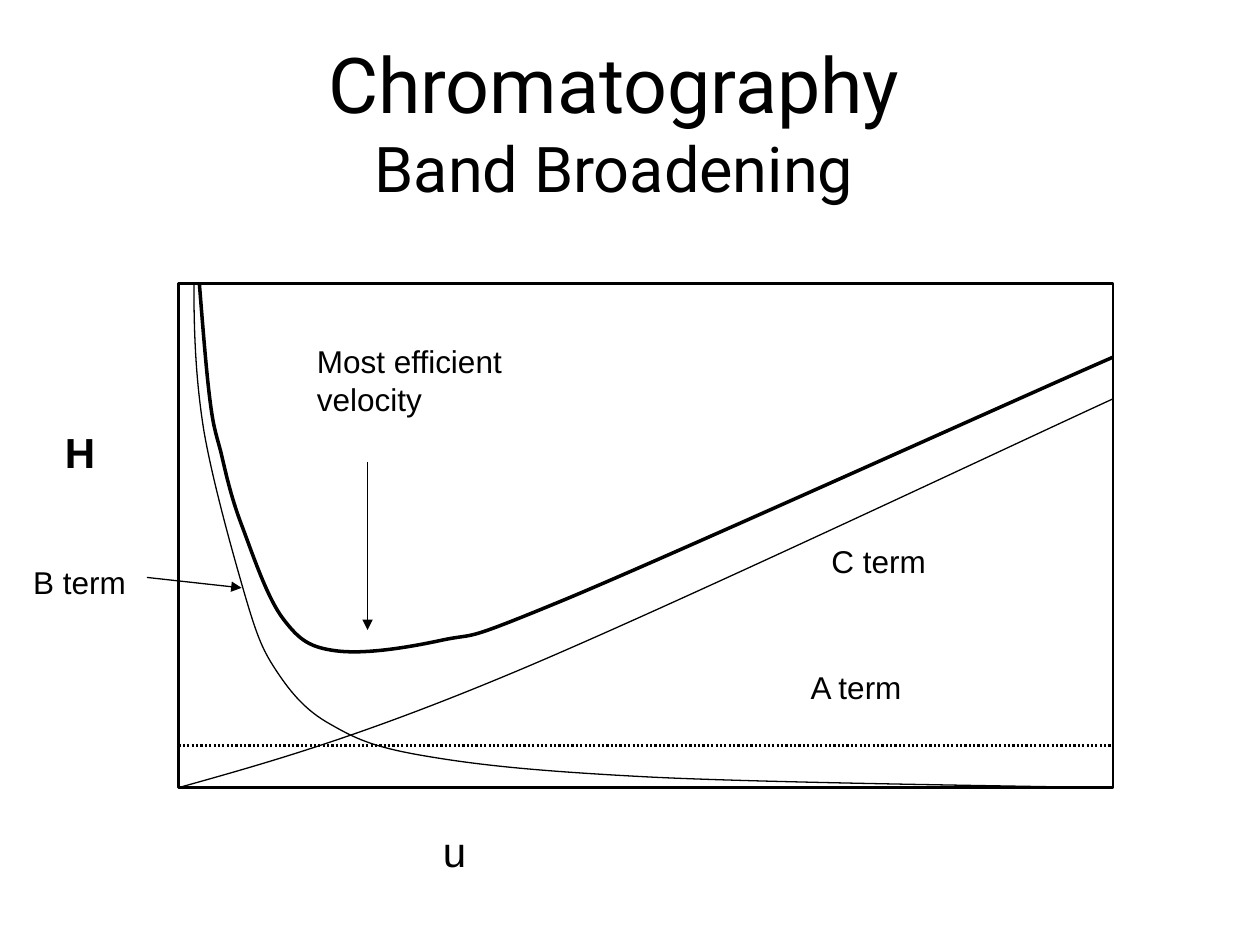
"""Draw the band broadening slide: plate height H against flow velocity u."""
from dataclasses import dataclass
from lxml.etree import SubElement as Sub
from pptx import Presentation as Deck
from pptx.dml.color import RGBColor as Rgb
from pptx.enum.dml import MSO_LINE as Dash
from pptx.enum.shapes import MSO_CONNECTOR as Join, MSO_SHAPE as Kind
from pptx.enum.text import MSO_ANCHOR as Anchor, PP_ALIGN as Align
from pptx.oxml.ns import qn
from pptx.util import Cm, Pt


@dataclass(frozen=True)
class Theme:
    ink: Rgb = Rgb(0, 0, 0)
    head: str = "Roboto"
    body: str = "Arial"
    title: int = 44
    sub: int = 36
    axis: int = 24
    note: int = 18
    thin: float = 0.75
    dots: float = 1.25
    frame: float = 1.5
    bold: float = 2


THEME = Theme()
LEFT, TOP, RIGHT, BASE = 3.6, 5.72, 22.44, 15.88
TERM = (5.08, 1.02)

B_TERM = [
    (3.91, TOP), (3.91, 6.66), (3.94, 7.62), (4.11, 8.68),
    (4.29, 9.73), (4.72, 11.25), (4.96, 12.07),
    (5.2, 12.88), (5.31, 13.13), (5.59, 13.55),
    (5.87, 13.97), (6.17, 14.33), (6.66, 14.6),
    (7.15, 14.88), (7.5, 15.06), (8.57, 15.24),
    (9.63, 15.42), (10.73, 15.54), (13.01, 15.66),
    (15.3, 15.78), (20.78, 15.85), (22.33, BASE),
]
C_TERM = [
    (LEFT, BASE), (5.42, 15.37), (7.24, 14.86), (10.37, 13.55),
    (13.5, 12.24), (20.43, 8.96), (RIGHT, 8.04),
]
TOTAL = [
    (4.02, TOP), (4.09, 6.6), (4.16, 7.48), (4.23, 8.04),
    (4.3, 8.6), (4.34, 8.69), (4.45, 9.1),
    (4.55, 9.52), (4.65, 10), (4.87, 10.58),
    (5.09, 11.16), (5.39, 12.07), (5.72, 12.49),
    (6.04, 12.91), (6.25, 13.05), (6.77, 13.12),
    (7.3, 13.19), (8.1, 13.08), (8.89, 12.91),
    (9.68, 12.74), (9.18, 13), (11.43, 12.07),
    (13.68, 11.13), (20.6, 8), (RIGHT, 7.2),
]


def style(item, form):
    for name, value in form.items():
        setattr(item, name, value)


def ink_line(shape, width):
    shape.line.color.rgb = THEME.ink
    shape.line.width = Pt(width)


def add_text(slide, runs, box, face, bold=False, **para):
    frame = slide.shapes.add_textbox(*map(Cm, box)).text_frame
    frame.word_wrap = True
    line = frame.paragraphs[0]
    style(line, para)
    for count, (text, size) in enumerate(runs):
        if count:
            line.add_line_break()
        run = line.add_run()
        run.text = text
        style(run.font, {"name": face, "size": Pt(size), "bold": bold})
        run.font.color.rgb = THEME.ink
    return frame


def add_label(slide, text, box, size=THEME.note, bold=False):
    add_text(slide, [(text, size)], box, THEME.body, bold)


def add_line(slide, start, end, width, arrow=False, dash=None):
    line = slide.shapes.add_connector(Join.STRAIGHT, *map(Cm, start + end))
    ink_line(line, width)
    if dash:
        line.line.dash_style = dash
    if arrow:
        Sub(line.line._get_or_add_ln(), qn("a:tailEnd"), type="triangle")
    Sub(line._element.spPr, qn("a:effectLst"))


def bend(curve):
    route = curve._element.find(".//" + qn("a:path"))
    steps = route.findall(qn("a:lnTo"))
    for i in range(0, len(steps), 3):
        arc = Sub(route, qn("a:cubicBezTo"))
        for step in steps[i:i + 3]:
            arc.append(step[0])
            route.remove(step)


def add_curve(slide, knots, width):
    first, *rest = [(Cm(x), Cm(y)) for x, y in knots]
    pen = slide.shapes.build_freeform(*first)
    pen.add_line_segments(rest, close=False)
    curve = pen.convert_to_shape()
    bend(curve)
    curve.shadow.inherit = False
    curve.fill.background()
    ink_line(curve, width)


def add_frame(slide):
    box = slide.shapes.add_shape(Kind.RECTANGLE, *map(Cm, (LEFT, TOP, RIGHT - LEFT, BASE - TOP)))
    box.shadow.inherit = False
    box.fill.background()
    ink_line(box, THEME.frame)


def main():
    deck = Deck()
    style(deck, {"slide_width": Cm(25.4), "slide_height": Cm(19.05)})
    slide = deck.slides.add_slide(deck.slide_layouts[6])
    title = add_text(slide, [("Chromatography", THEME.title), ("Band Broadening", THEME.sub)],
                     (0.85, 0.85, 23.06, 3.17), THEME.head, alignment=Align.CENTER)
    title.vertical_anchor = Anchor.MIDDLE
    add_frame(slide)
    add_label(slide, "u", (8.68, 16.51, 7.83, 1.27), THEME.axis)
    add_label(slide, "H", (1.06, 8.47, 1.48, 1.27), THEME.axis, True)
    add_label(slide, "Most efficient velocity", (6.14, 6.77, 5.08, 1.78))
    add_line(slide, (7.41, 9.31), (7.41, 12.7), THEME.thin, arrow=True)
    add_line(slide, (LEFT, 15.03), (RIGHT, 15.03), THEME.dots, dash=Dash.ROUND_DOT)
    add_label(slide, "A term", (16.09, 13.34, *TERM))
    add_curve(slide, B_TERM, THEME.thin)
    add_label(slide, "B term", (0.42, 11.22, *TERM))
    add_line(slide, (2.96, 11.64), (4.87, 11.85), THEME.thin, arrow=True)
    add_curve(slide, C_TERM, THEME.thin)
    add_label(slide, "C term", (16.51, 10.8, *TERM))
    add_curve(slide, TOTAL, THEME.bold)
    deck.save("out.pptx")


if __name__ == "__main__":
    main()
